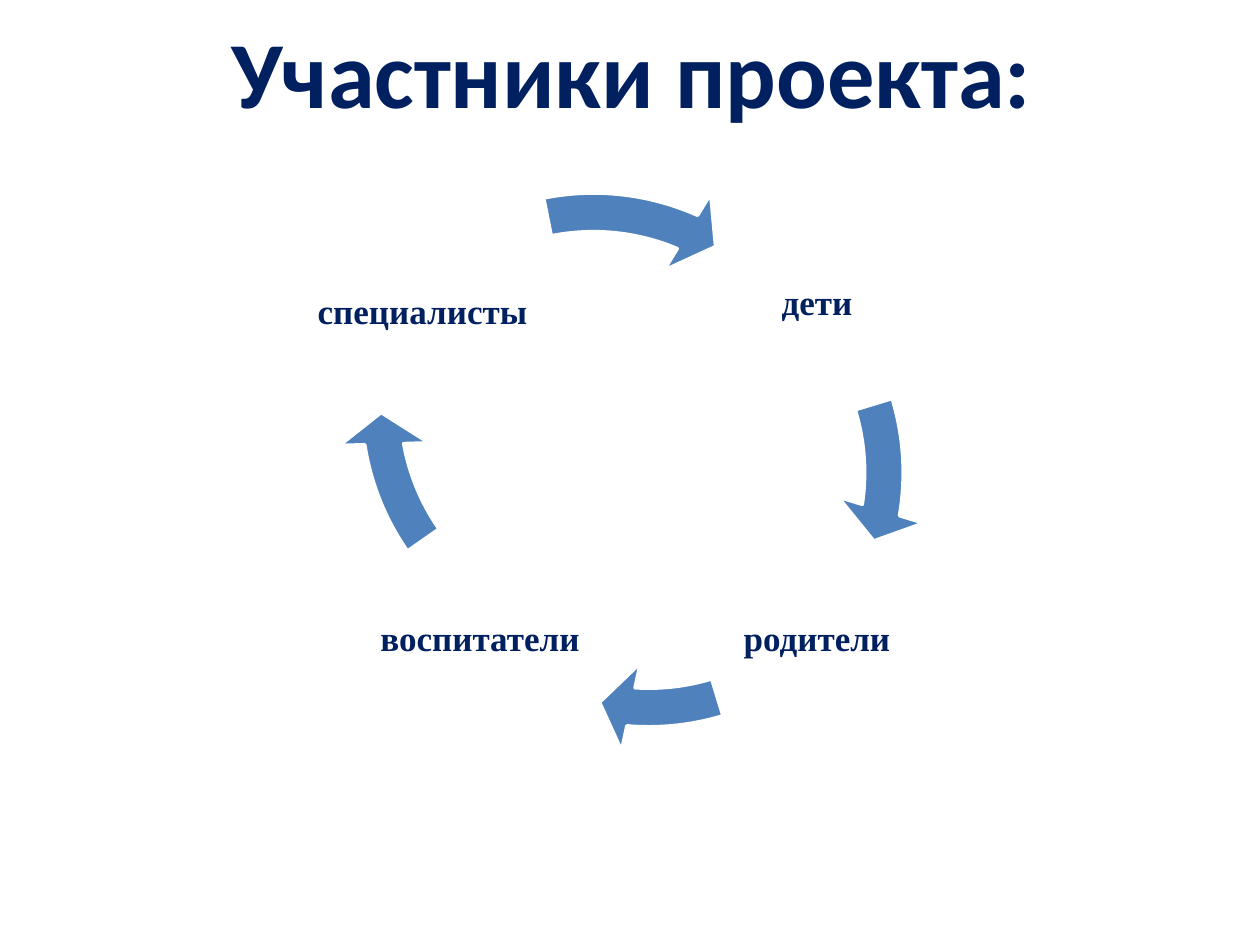
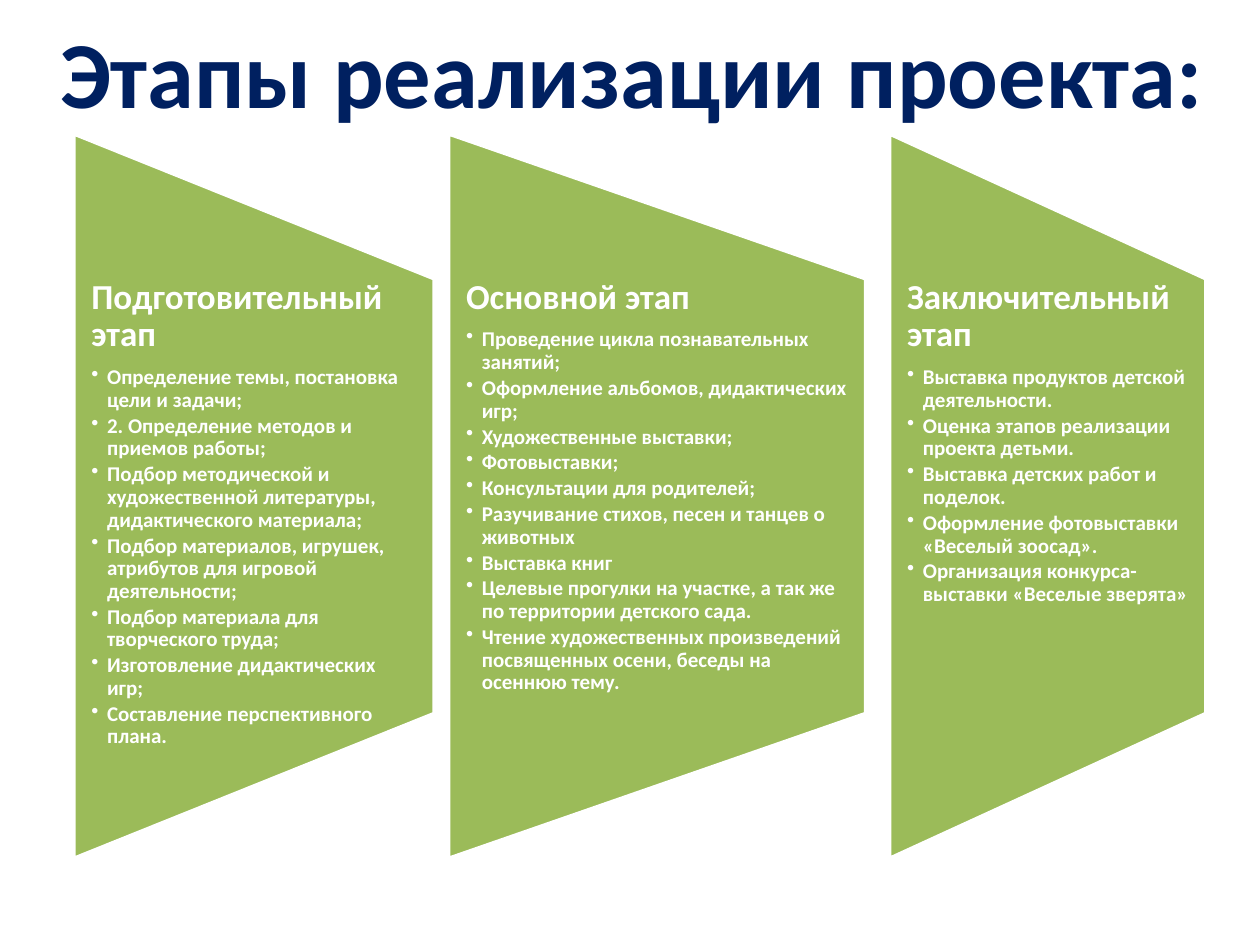
from lxml.etree import SubElement
from pptx import Presentation
from pptx.dml.color import RGBColor
from pptx.enum.shapes import MSO_SHAPE as SHAPE
from pptx.enum.text import MSO_ANCHOR as ANCHOR, MSO_AUTO_SIZE as AUTOSIZE, PP_ALIGN as ALIGN
from pptx.oxml import parse_xml
from pptx.oxml.ns import nsdecls, qn
from pptx.util import Pt

NAVY, BLUE, GREEN, WHITE, GLOW = "002060", "4F81BD", "9BBB59", "FFFFFF", "7EA6EA"
SANS, SERIF = "Calibri", "Times New Roman"
TITLE_CENTER = 361
ARROW_SIZE = 319.7
PANEL_TOP, PANEL_HEIGHT = 76.5, 414
BULLET_INDENT = 9

# text, left, top, width
PARTICIPANTS = [
    ("дети", 410.4, 117.4, 113),
    ("родители", 410.4, 309.6, 113),
    ("воспитатели", 206.6, 309.6, 135.4),
    ("специалисты", 156.2, 122.4, 170.6),
]
LABEL_HEIGHT = 113

# left, top, end angle, start angle (degrees, clockwise from the right)
ARROWS = [
    (211, 110.2, 9.18, 343.07),
    (211, 110.2, 94.38, 73.07),
    (192.2, 72, 170.57, 145.12),
    (179.3, 95.8, 293.58, 258.72),
]

# heading, left, width, steps
STAGES = [
    ("Подготовительный этап", 42.2, 205.9, [
        "Определение темы, постановка цели и задачи;",
        "2. Определение методов и приемов работы;",
        "Подбор методической и художественной литературы, дидактического материала;",
        "Подбор материалов, игрушек, атрибутов для игровой деятельности;",
        "Подбор материала для творческого труда;",
        "Изготовление дидактических игр;",
        "Составление перспективного плана.",
    ]),
    ("Основной этап", 256.3, 238.3, [
        "Проведение цикла познавательных занятий;",
        "Оформление альбомов, дидактических игр;",
        "Художественные выставки;",
        "Фотовыставки;",
        "Консультации для родителей;",
        "Разучивание стихов, песен и танцев о животных",
        "Выставка книг",
        "Целевые прогулки на участке, а так же по территории детского сада.",
        "Чтение художественных произведений посвященных осени, беседы на осеннюю тему.",
    ]),
    ("Заключительный этап", 508.3, 180.7, [
        "Выставка продуктов детской деятельности.",
        "Оценка этапов реализации проекта детьми.",
        "Выставка детских работ и поделок.",
        "Оформление фотовыставки «Веселый зоосад».",
        "Организация конкурса-выставки «Веселые зверята»",
    ]),
]


def rgb(color):
    return RGBColor.from_string(color)


def set_margins(tf, x, y):
    tf.margin_left = tf.margin_right = Pt(x)
    tf.margin_top = tf.margin_bottom = Pt(y)


def write(p, text, size=20, font=SANS, color=WHITE, align=ALIGN.LEFT,
          spacing=0.9, after=0, bullet=False):
    """Fill a paragraph with one bold run and format it."""
    p.alignment, p.line_spacing, p.space_after = align, spacing, Pt(after)
    if bullet:
        p.level = 1
        pPr = p._p.get_or_add_pPr()
        pPr.set("marL", str(Pt(BULLET_INDENT)))
        pPr.set("indent", str(-Pt(BULLET_INDENT)))
        SubElement(pPr, qn("a:buChar")).set("char", "•")
    r = p.add_run()
    r.text = text
    r.font.name, r.font.size, r.font.bold = font, Pt(size), True
    r.font.color.rgb = rgb(color)
    return r


class Deck:
    def __init__(self):
        self.prs = Presentation()
        self.prs.slide_width, self.prs.slide_height = Pt(720), Pt(540)
        self.slide = None

    def add_slide(self, title, width):
        self.slide = self.prs.slides.add_slide(self.prs.slide_layouts[5])
        sp = self.slide.shapes.title
        sp.left, sp.top = Pt(TITLE_CENTER - width / 2), Pt(4.3)
        sp.width, sp.height = Pt(width), Pt(72.7)
        tf = sp.text_frame
        tf.word_wrap, tf.auto_size = False, AUTOSIZE.SHAPE_TO_FIT_TEXT
        tf.vertical_anchor = ANCHOR.TOP
        r = write(tf.paragraphs[0], title, size=54, color=NAVY, align=ALIGN.CENTER, spacing=1.0)
        outline = parse_xml(
            f'<a:ln {nsdecls("a")} w="{Pt(2.48)}"><a:solidFill>'
            f'<a:srgbClr val="{GLOW}"/></a:solidFill></a:ln>')
        r.font._element.insert(0, outline)

    def add_shape(self, kind, left, top, width, height, fill):
        sp = self.slide.shapes.add_shape(kind, Pt(left), Pt(top), Pt(width), Pt(height))
        sp.shadow.inherit = False
        sp.fill.solid()
        sp.fill.fore_color.rgb = rgb(fill)
        sp.line.color.rgb = rgb(WHITE)
        sp.line.width = Pt(2)
        return sp

    def add_box(self, left, top, width, height, margins, anchor=ANCHOR.TOP):
        sp = self.slide.shapes.add_textbox(Pt(left), Pt(top), Pt(width), Pt(height))
        tf = sp.text_frame
        tf.word_wrap, tf.vertical_anchor = True, anchor
        set_margins(tf, *margins)
        return tf

    def add_label(self, text, left, top, width):
        tf = self.add_box(left, top, width, LABEL_HEIGHT, (2, 2), ANCHOR.MIDDLE)
        write(tf.paragraphs[0], text, font=SERIF, color=NAVY, align=ALIGN.CENTER, after=7)

    def add_cycle_arrow(self, left, top, end, start):
        sp = self.add_shape(SHAPE.CIRCULAR_ARROW, left, top, ARROW_SIZE, ARROW_SIZE, BLUE)
        head = 7.75
        # Angles are stored in 1/60000 degree, adjustments are scaled by 100000.
        angles = [angle * 0.6 for angle in (head, end, start)]
        for i, value in enumerate([0.069, *angles, 0.08]):
            sp.adjustments[i] = value

    def add_stage(self, heading, left, width, steps):
        """Add a trapezoid, turned to stand on its side, with its heading and steps."""
        turn = (PANEL_HEIGHT - width) / 2
        sp = self.add_shape(SHAPE.FLOWCHART_MANUAL_OPERATION, left - turn, PANEL_TOP + turn,
                            PANEL_HEIGHT, width, GREEN)
        sp.rotation = 270
        tf = self.add_box(left, PANEL_TOP + PANEL_HEIGHT / 5, width, PANEL_HEIGHT * 0.6, (10, 0))
        write(tf.paragraphs[0], heading, after=7)
        for step in steps:
            write(tf.add_paragraph(), step, size=12, after=1.8, bullet=True)


def main():
    deck = Deck()

    deck.add_slide("Участники проекта:", 476)
    for label, arrow in zip(PARTICIPANTS, ARROWS):
        deck.add_label(*label)
        deck.add_cycle_arrow(*arrow)

    deck.add_slide("Этапы реализации проекта:", 674)
    for stage in STAGES:
        deck.add_stage(*stage)

    deck.prs.save("out.pptx")


if __name__ == "__main__":
    main()
